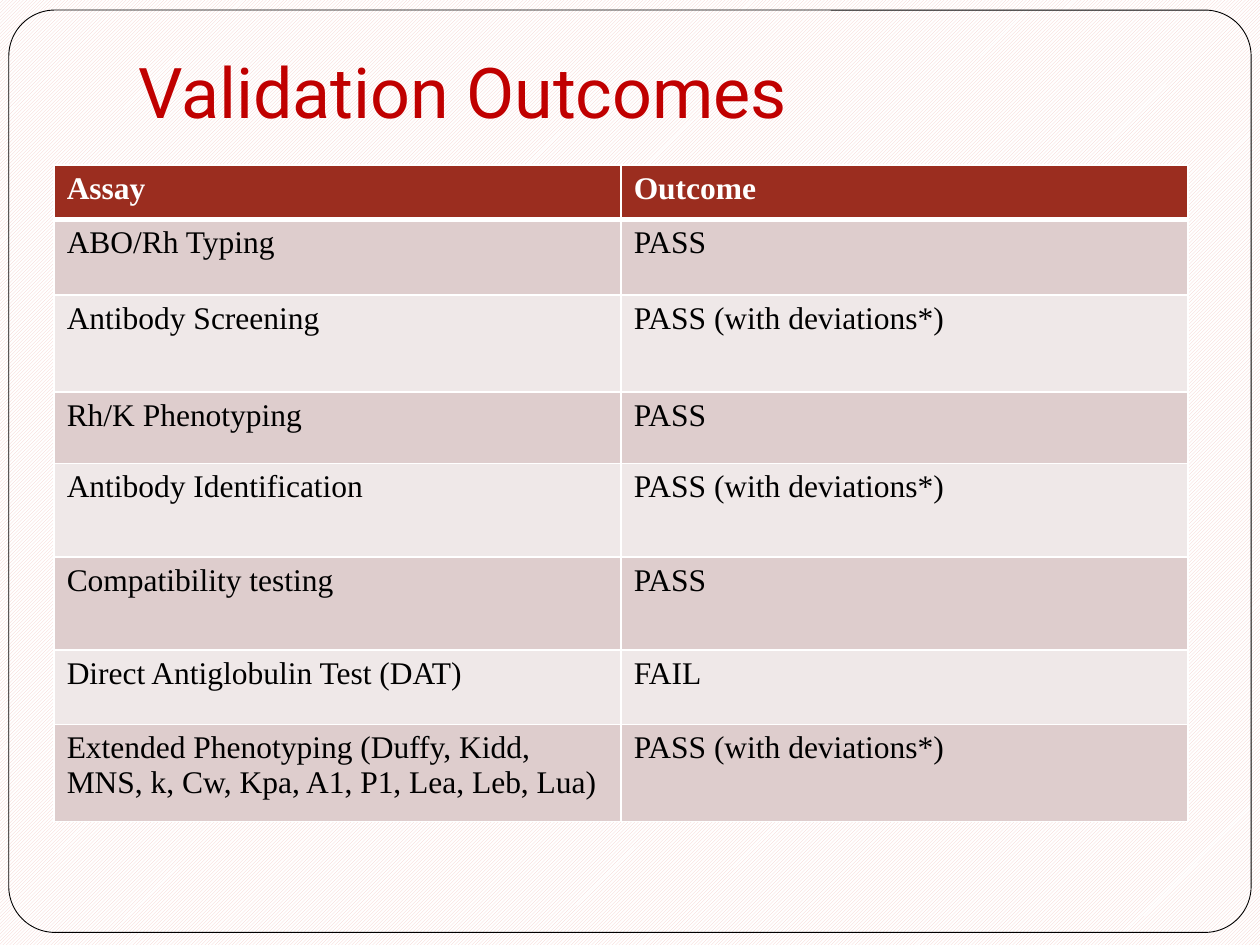
import pptx
import pptx.util
import pptx.dml.color
import pptx.enum.dml
import pptx.enum.shapes
import pptx.enum.text
import pptx.oxml
import pptx.oxml.ns

Inches = pptx.util.Inches
Pt = pptx.util.Pt

TITLE = "Validation Outcomes"
ROWS = [
    ("Assay", "Outcome", 0.43),
    ("ABO/Rh Typing", "PASS", 0.6),
    ("Antibody Screening", "PASS (with deviations*)", 0.77),
    ("Rh/K Phenotyping", "PASS", 0.57),
    ("Antibody Identification", "PASS (with deviations*)", 0.74),
    ("Compatibility testing", "PASS", 0.74),
    ("Direct Antiglobulin Test (DAT)", "FAIL", 0.59),
    ("Extended Phenotyping (Duffy, Kidd, MNS, k, Cw, Kpa, A1, P1, Lea, Leb, Lua)",
     "PASS (with deviations*)", 0.77),
]
HEADER_FILL = "9B2D1F"
BAND_FILLS = ("EFE8E8", "DECDCD")


def color(value):
    return pptx.dml.color.RGBColor.from_string(value)


def set_font(paragraph, name, size, value, bold=False):
    font = paragraph.font
    font.name, font.size, font.bold = name, Pt(size), bold
    font.color.rgb = color(value)


def hatch(fill):
    fill.patterned()
    fill.pattern = pptx.enum.dml.MSO_PATTERN.LIGHT_UPWARD_DIAGONAL
    fill.fore_color.rgb = color("F4CEC9")
    fill.back_color.rgb = color("FFFFFF")


def set_borders(cell, widths):
    properties = cell._tc.get_or_add_tcPr()
    for position, (side, width) in enumerate(widths.items()):
        properties.insert(position, pptx.oxml.parse_xml(
            f'<a:ln{side} {pptx.oxml.ns.nsdecls("a")} w="{Pt(width)}">'
            f'<a:solidFill><a:srgbClr val="FFFFFF"/></a:solidFill></a:ln{side}>'))


def add_frame(slide):
    hatch(slide.background.fill)
    frame = slide.shapes.add_shape(
        pptx.enum.shapes.MSO_SHAPE.ROUNDED_RECTANGLE,
        Inches(0.07), Inches(0.08), Inches(9.86), Inches(7.32))
    frame.adjustments[0] = 0.05
    frame.shadow.inherit = False
    hatch(frame.fill)
    frame.line.color.rgb = color("000000")
    frame.line.width = Pt(0.5)


def add_title(slide):
    box = slide.shapes.add_textbox(Inches(1), Inches(0.3), Inches(8.5), Inches(0.85))
    text_frame = box.text_frame
    text_frame.word_wrap = True
    text_frame.vertical_anchor = pptx.enum.text.MSO_ANCHOR.BOTTOM
    text_frame.margin_bottom = Inches(0.1)
    text_frame.text = TITLE
    set_font(text_frame.paragraphs[0], "Roboto", 40, "C00000")


def add_outcomes(slide):
    height = sum(row[-1] for row in ROWS)
    table = slide.shapes.add_table(
        len(ROWS), 2, Inches(0.43), Inches(1.31), Inches(9), Inches(height)).table
    for index, (assay, outcome, row_height) in enumerate(ROWS):
        table.rows[index].height = Inches(row_height)
        header = index == 0
        for column, text in enumerate((assay, outcome)):
            cell = table.cell(index, column)
            cell.text = text
            set_font(cell.text_frame.paragraphs[0], "Times New Roman", 18,
                     "FFFFFF" if header else "000000", header)
            cell.fill.solid()
            cell.fill.fore_color.rgb = color(HEADER_FILL if header else BAND_FILLS[index % 2])
            set_borders(cell, {"L": 1, "R": 1, "T": 3 if index == 1 else 1,
                               "B": 3 if header else 1})


def main():
    presentation = pptx.Presentation()
    presentation.slide_width = Inches(10)
    presentation.slide_height = Inches(7.5)
    slide = presentation.slides.add_slide(presentation.slide_layouts[6])
    add_frame(slide)
    add_title(slide)
    add_outcomes(slide)
    presentation.save("out.pptx")


if __name__ == "__main__":
    main()
